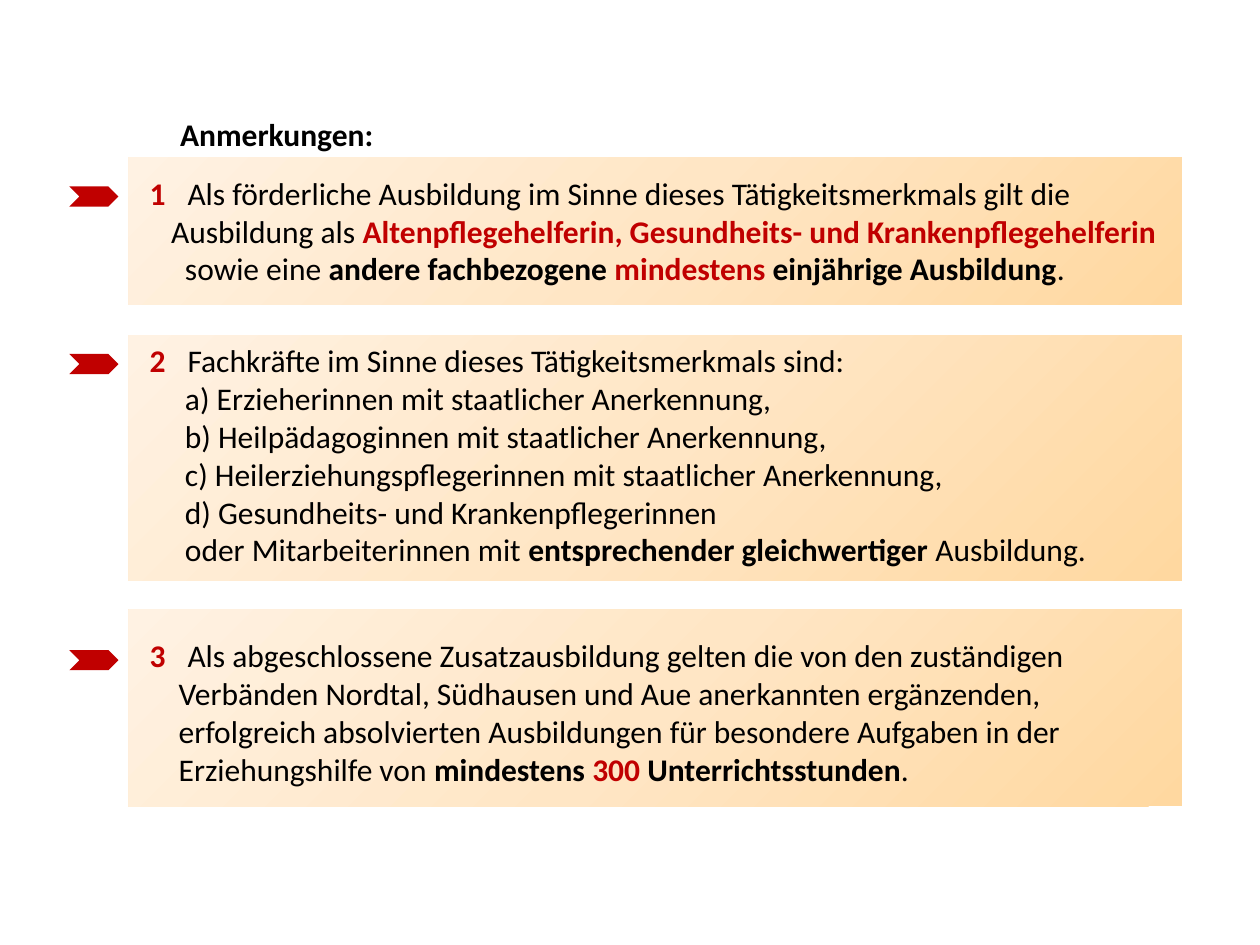
from copy import deepcopy

from pptx import Presentation
from pptx.dml.color import RGBColor
from pptx.enum.shapes import MSO_SHAPE
from pptx.enum.text import MSO_ANCHOR, MSO_AUTO_SIZE, PP_ALIGN
from pptx.util import Inches, Pt

RECT, CHEVRON = MSO_SHAPE.RECTANGLE, MSO_SHAPE.CHEVRON
TOP, LEFT = MSO_ANCHOR.TOP, PP_ALIGN.LEFT
GROW = MSO_AUTO_SIZE.SHAPE_TO_FIT_TEXT

COLORS = {
    "text": "000000",
    "accent": "C00000",
    "panel_dark": "FFD8A0",
    "panel_mid": "FFE6C5",
    "panel_light": "FFF2E3",
}
PLAIN, BOLD, RED = ("text", False), ("text", True), ("accent", True)
NUMBER_INDENT = 0.3

NOTES = [
    {
        "panel": (1.25, 1.17), "text": (1.33, 8.44, 1.01), "arrow": 1.48,
        "lines": [
            (NUMBER_INDENT, [("1", RED), ("\tAls förderliche Ausbildung im Sinne dieses Tätigkeitsmerkmals gilt die", PLAIN)]),
            (0.17, [("Ausbildung als ", PLAIN),
                    ("Altenpflegehelferin, Gesundheits- und Krankenpflegehelferin", RED)]),
            (0.28, [("sowie eine ", PLAIN), ("andere fachbezogene ", BOLD), ("mindestens ", RED),
                    ("einjährige Ausbildung", BOLD), (".", PLAIN)]),
        ],
    },
    {
        "panel": (2.66, 1.95), "text": (2.66, 8.2, 1.92), "arrow": 2.81,
        "lines": [
            (NUMBER_INDENT, [("2", RED), ("\tFachkräfte im Sinne dieses Tätigkeitsmerkmals sind:", PLAIN)]),
            (0.28, [("a) Erzieherinnen mit staatlicher Anerkennung,", PLAIN)]),
            (0.28, [("b) Heilpädagoginnen mit staatlicher Anerkennung,", PLAIN)]),
            (0.28, [("c) Heilerziehungspflegerinnen mit staatlicher Anerkennung,", PLAIN)]),
            (0.28, [("d) Gesundheits- und Krankenpflegerinnen", PLAIN)]),
            (0.28, [("oder Mitarbeiterinnen mit ", PLAIN),
                    ("entsprechender gleichwertiger ", BOLD), ("Ausbildung.", PLAIN)]),
        ],
    },
    {
        "panel": (4.84, 1.56), "text": (5, 7.97, 1.31), "arrow": 5.16,
        "lines": [
            (NUMBER_INDENT, [("3", RED), ("\tAls abgeschlossene Zusatzausbildung gelten die von den zuständigen", PLAIN)]),
            (0.23, [("Verbänden Nordtal, Südhausen und Aue anerkannten ergänzenden,", PLAIN)]),
            (0.23, [("erfolgreich absolvierten Ausbildungen für besondere Aufgaben in der", PLAIN)]),
            (0.23, [("Erziehungshilfe von ", PLAIN), ("mindestens ", BOLD), ("300 ", RED),
                    ("Unterrichtsstunden", BOLD), (".", PLAIN)]),
        ],
    },
]


class NotesSlide:
    font, size = "Calibri", Pt(18)

    def __init__(self, prs):
        self.s = prs.slides.add_slide(prs.slide_layouts[5])

    def color(self, name):
        return RGBColor.from_string(COLORS[name])

    def run(self, p, text, style):
        color, bold = style
        r = p.add_run()
        r.text = text
        r.font.name, r.font.size, r.font.bold = self.font, self.size, bold
        r.font.color.rgb = self.color(color)

    def title(self, text, x, y, w, h):
        sp = self.s.shapes.title
        sp.left, sp.top, sp.width, sp.height = map(Inches, (x, y, w, h))
        tf = sp.text_frame
        tf.word_wrap, tf.auto_size, tf.vertical_anchor = False, GROW, TOP
        p = tf.paragraphs[0]
        p.alignment = LEFT
        self.run(p, text, BOLD)

    def shape(self, shapes, kind, x, y, w, h):
        sp = shapes.add_shape(kind, *map(Inches, (x, y, w, h)))
        sp.shadow.inherit = False
        sp.line.fill.background()
        return sp

    def panel(self, shapes, x, y, w, h):
        fill = self.shape(shapes, RECT, x, y, w, h).fill
        fill.gradient()
        fill.gradient_angle = 135
        first = fill.gradient_stops[0]._gs
        first.addnext(deepcopy(first))
        for stop, position, name in zip(fill.gradient_stops, (0, 0.5, 1),
                                        ("panel_dark", "panel_mid", "panel_light")):
            stop.position = position
            stop.color.rgb = self.color(name)

    def text(self, shapes, lines, x, y, w, h):
        tf = shapes.add_textbox(*map(Inches, (x, y, w, h))).text_frame
        tf.word_wrap, tf.auto_size = True, GROW
        for i, (indent, runs) in enumerate(lines):
            p = tf.paragraphs[0] if i == 0 else tf.add_paragraph()
            pPr = p._p.get_or_add_pPr()
            pPr.set("marL", str(Inches(indent)))
            pPr.set("indent", str(-Inches(indent) if i == 0 else 0))
            for text, style in runs:
                self.run(p, text, style)

    def arrow(self, y):
        sp = self.shape(self.s.shapes, CHEVRON, 0.55, y, 0.39, 0.16)
        sp.fill.solid()
        sp.fill.fore_color.rgb = self.color("accent")

    def note(self, note):
        shapes = self.s.shapes.add_group_shape().shapes
        top, height = note["panel"]
        self.panel(shapes, 1.02, top, 8.36, height)
        self.text(shapes, note["lines"], 1.09, *note["text"])
        self.arrow(note["arrow"])


def main():
    prs = Presentation()
    prs.slide_width, prs.slide_height = Inches(10), Inches(7.5)
    slide = NotesSlide(prs)
    slide.title("Anmerkungen:", 1.33, 0.86, 1.75, 0.4)
    for note in NOTES:
        slide.note(note)
    prs.save("out.pptx")


if __name__ == "__main__":
    main()
